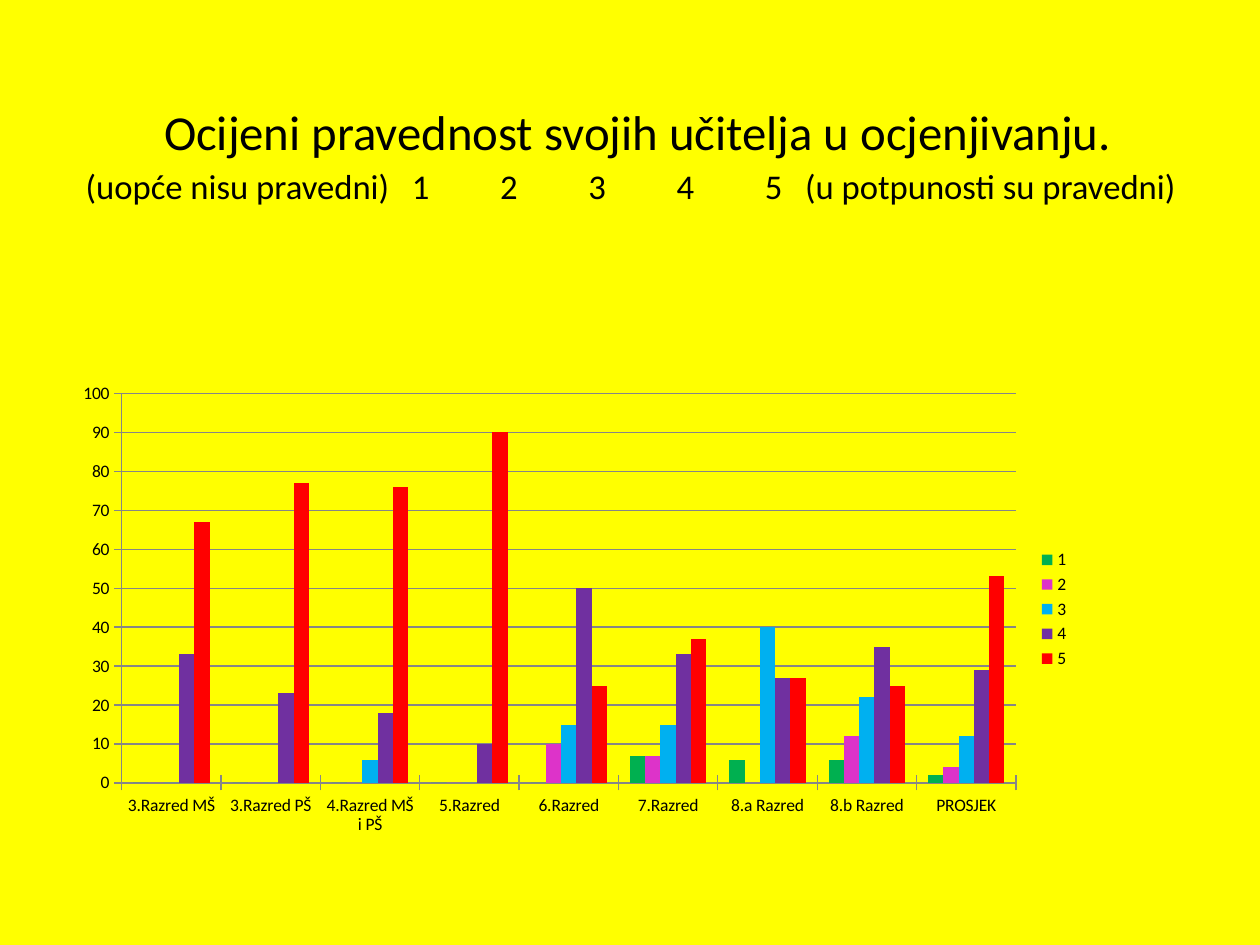
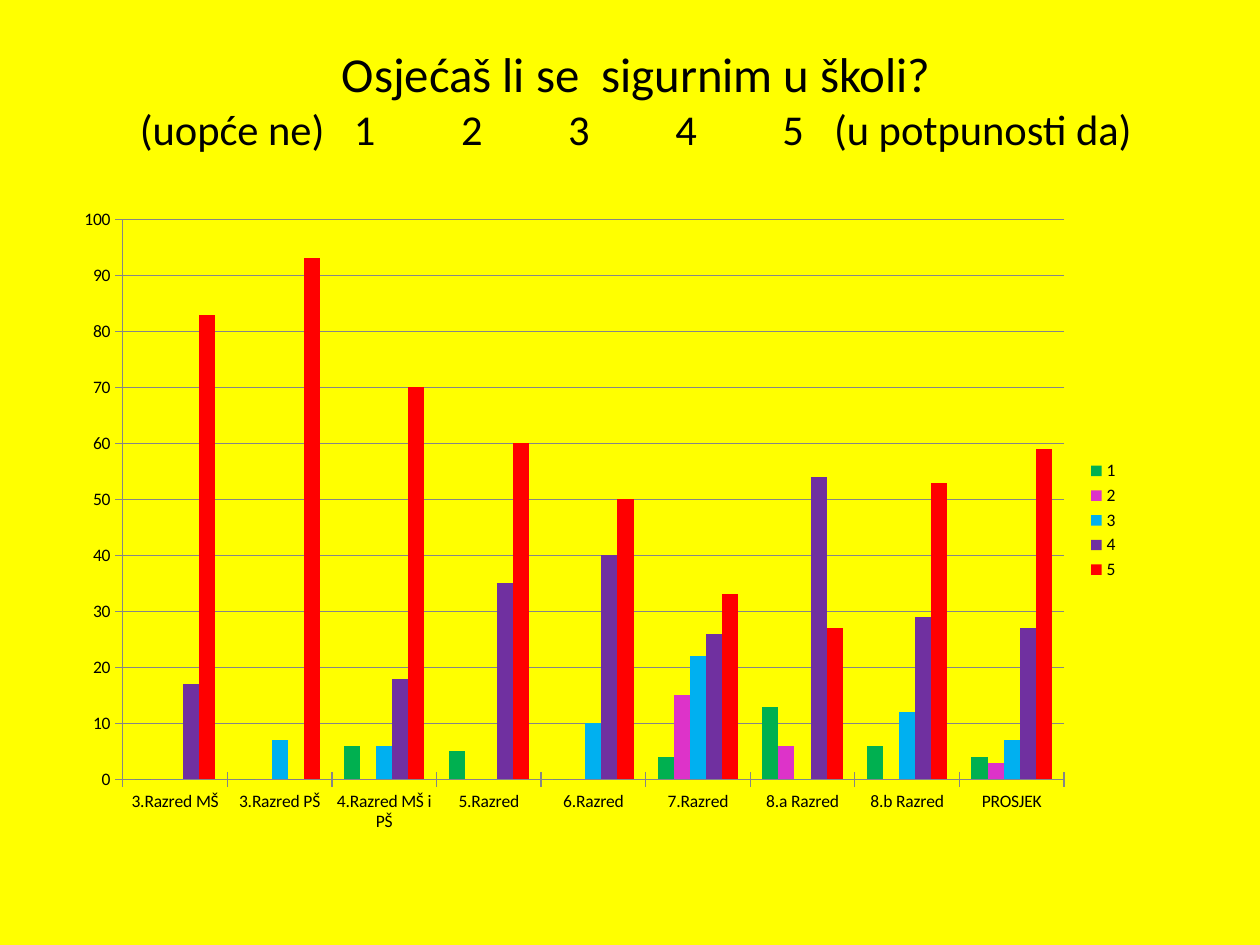
from pptx import Presentation
from pptx.chart.data import CategoryChartData
from pptx.dml.color import RGBColor
from pptx.enum.chart import XL_CHART_TYPE, XL_LEGEND_POSITION, XL_TICK_MARK
from pptx.enum.text import MSO_ANCHOR, PP_ALIGN
from pptx.util import Inches, Pt
from lxml.etree import SubElement
from pptx.oxml.ns import qn

FONT = "Calibri"
INK = {"back": "FFFF00", "text": "000000", "grid": "868686"}
BARS = {"1": "00B050", "2": "DD33C9", "3": "00B0F0", "4": "7030A0", "5": "FF0000"}
GRADES = ["3.Razred MŠ", "3.Razred PŠ", "4.Razred MŠ i PŠ", "5.Razred", "6.Razred",
          "7.Razred", "8.a Razred", "8.b Razred", "PROSJEK"]

PAGES = [
    dict(title="Ocijeni pravednost svojih učitelja u ocjenjivanju.",
         low="(uopće nisu pravedni)", high="(u potpunosti su pravedni)",
         box=(0.5, 1.02, 9, 0.53), pads=(0.18, 0, 0.06, 0.12), size=19.8, gap=2.5,
         first=2.59, step=0.7, last=5.71, plot=(0.5, 2.97, 8.09, 3.73),
         vals=[[0, 0, 0, 0, 0, 7, 6, 6, 2],
               [0, 0, 0, 0, 10, 7, 0, 12, 4],
               [0, 0, 6, 0, 15, 15, 40, 22, 12],
               [33, 23, 18, 10, 50, 33, 27, 35, 29],
               [67, 77, 76, 90, 25, 37, 27, 25, 53]]),
    dict(title="Osjećaš li se  sigurnim u školi?",
         low="(uopće ne)", high="(u potpunosti da)",
         box=(0.55, 0.7, 9, 0.77), pads=(0.56, 0, 0.56, 0.6), size=24.3, gap=0,
         first=1.7, step=0.85, last=5.51, plot=(0.5, 1.56, 8.48, 5.14),
         vals=[[0, 0, 6, 5, 0, 4, 13, 6, 4],
               [0, 0, 0, 0, 0, 15, 6, 0, 3],
               [0, 7, 6, 0, 10, 22, 0, 12, 7],
               [17, 0, 18, 35, 40, 26, 54, 29, 27],
               [83, 93, 70, 60, 50, 33, 27, 53, 59]]),
]


def write(para, text, size, align, gap=0, stops=()):
    para.alignment = align
    para.space_before = Pt(gap)
    run = para.add_run()
    run.text = text
    run.font.name = FONT
    run.font.size = Pt(size)
    run.font.color.rgb = RGBColor.from_string(INK["text"])
    if stops:
        tabs = SubElement(para._p.get_or_add_pPr(), qn("a:tabLst"))
        for stop in stops:
            SubElement(tabs, qn("a:tab"), pos=str(Inches(stop)), algn="l")


deck = Presentation()
deck.slide_width = Inches(10)
deck.slide_height = Inches(7.5)

for page in PAGES:
    slide = deck.slides.add_slide(deck.slide_layouts[6])
    slide.background.fill.solid()
    slide.background.fill.fore_color.rgb = RGBColor.from_string(INK["back"])

    frame = slide.shapes.add_textbox(*map(Inches, page["box"])).text_frame
    frame.word_wrap = True
    frame.vertical_anchor = MSO_ANCHOR.MIDDLE
    (frame.margin_left, frame.margin_top,
     frame.margin_right, frame.margin_bottom) = map(Inches, page["pads"])
    write(frame.paragraphs[0], page["title"], 27.9, PP_ALIGN.CENTER)
    stops = [page["first"] + page["step"] * i for i in range(5)] + [page["last"]]
    scale = "\t".join([page["low"], *BARS, page["high"]])
    write(frame.add_paragraph(), scale, page["size"], PP_ALIGN.LEFT,
          gap=page["gap"], stops=stops)

    data = CategoryChartData()
    data.categories = GRADES
    for name, vals in zip(BARS, page["vals"]):
        data.add_series(name, vals)
    chart = slide.shapes.add_chart(
        XL_CHART_TYPE.COLUMN_CLUSTERED, *map(Inches, page["plot"]), data).chart
    chart.has_title = False
    chart.font.name = FONT
    chart.font.size = Pt(10)
    chart.font.color.rgb = RGBColor.from_string(INK["text"])
    chart.has_legend = True
    chart.legend.position = XL_LEGEND_POSITION.RIGHT
    chart.legend.include_in_layout = False

    axis = chart.value_axis
    axis.minimum_scale = 0
    axis.maximum_scale = 100
    axis.major_unit = 10
    axis.has_major_gridlines = True
    for side in (axis, chart.category_axis):
        side.major_tick_mark = XL_TICK_MARK.CROSS
    for part in (axis, chart.category_axis, axis.major_gridlines):
        part.format.line.width = Pt(0.75)
        part.format.line.color.rgb = RGBColor.from_string(INK["grid"])

    plot = chart.plots[0]
    plot.gap_width = 150
    plot.overlap = 0
    plot.vary_by_categories = False
    for bar, tone in zip(plot.series, BARS.values()):
        bar.format.fill.solid()
        bar.format.fill.fore_color.rgb = RGBColor.from_string(tone)

deck.save("out.pptx")
